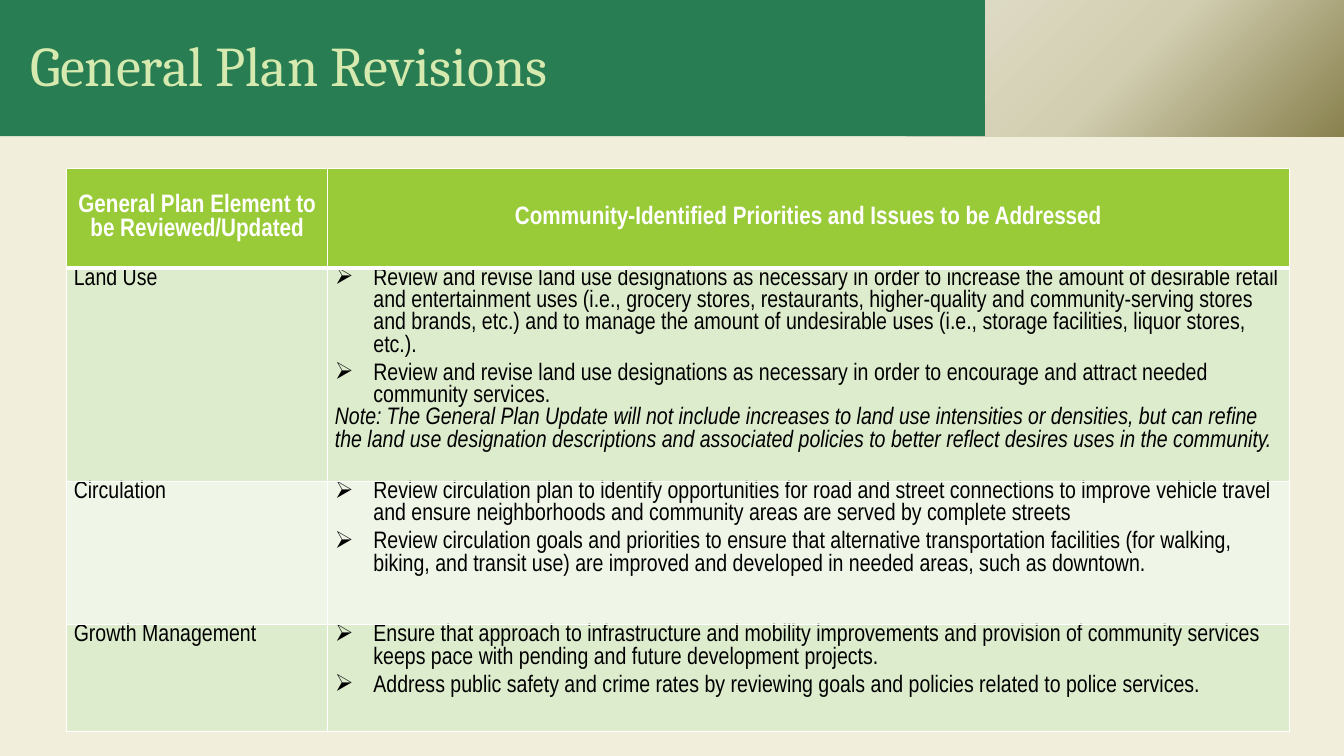
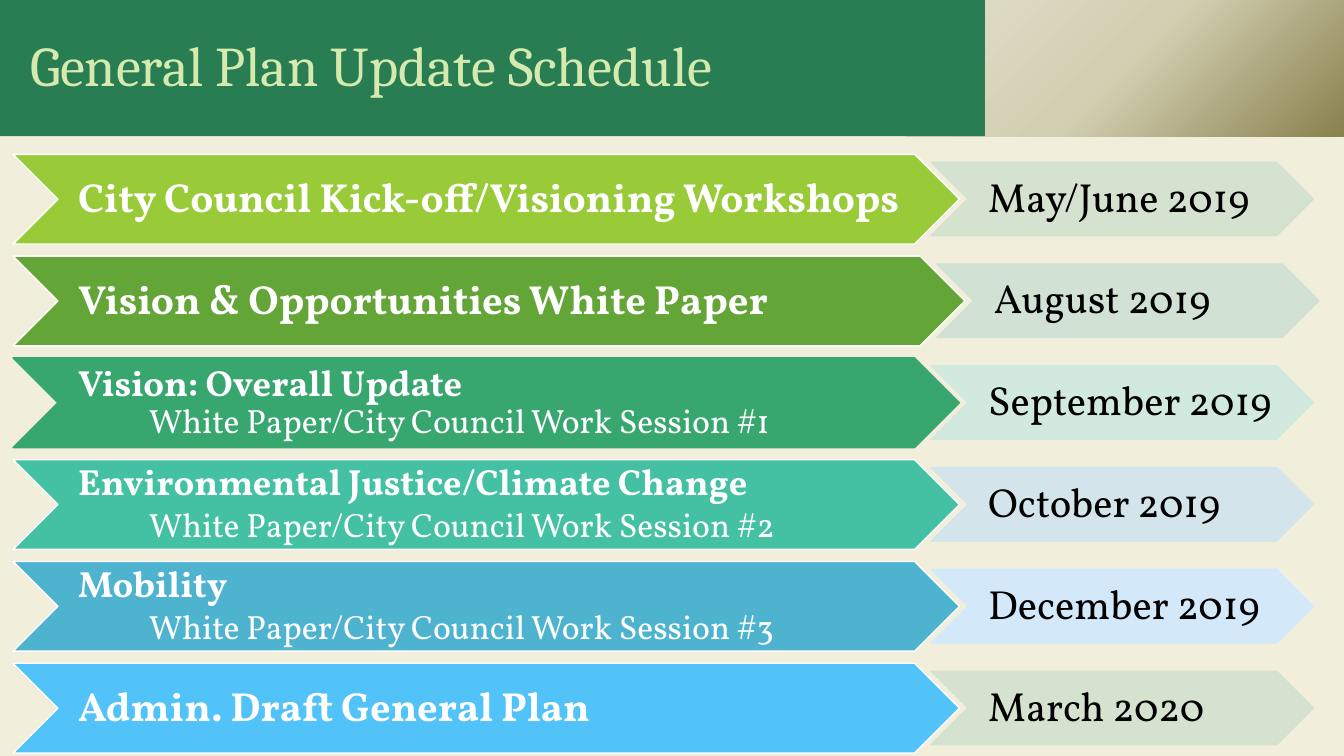
"""Build two slides on a general plan update: revisions table and schedule."""
from lxml import etree
from pptx import Presentation
from pptx import util as u
from pptx.dml.color import RGBColor
from pptx.enum import shapes, text
from pptx.oxml import parse_xml
from pptx.oxml.ns import nsdecls, qn

BACKGROUND, BAND, TITLE = "F1EFDC", "297D53", "D6EAAF"
WHITE, BLACK, LIME = "FFFFFF", "000000", "99CB38"
TABLE_FONT, TITLE_FONT, STEP_FONT = "Arial Narrow", "Cambria", "Vollkorn"
BAND_HEIGHT = 3.43


def paint(fill, colour):
    fill.solid()
    fill.fore_color.rgb = RGBColor.from_string(colour)


def write(frame, words, size, font, colour, bold=False, italic=False, align="LEFT",
          left=0, first=0, after=0, spacing=None, bullet=None):
    para = frame.add_paragraph() if frame.text else frame.paragraphs[0]
    para.alignment = getattr(text.PP_ALIGN, align)
    para.space_after = u.Pt(after)
    if spacing:
        para.line_spacing = spacing
    props = para._p.get_or_add_pPr()
    props.set("marL", str(u.Cm(left)))
    props.set("indent", str(u.Cm(first)))
    if bullet:
        etree.SubElement(props, qn("a:buChar")).set("char", bullet)
    span = para.add_run()
    span.text = words
    span.font.size, span.font.name = u.Pt(size), font
    span.font.bold, span.font.italic = bold, italic
    paint(span.font.fill, colour)


deck = Presentation()
deck.slide_width, deck.slide_height = u.Cm(33.87), u.Cm(19.05)
paint(deck.slide_master.background.fill, BACKGROUND)

pages = []
for heading in ("General Plan Revisions", "General Plan Update Schedule"):
    page = deck.slides.add_slide(deck.slide_layouts[6])
    corner = page.shapes.add_shape(shapes.MSO_SHAPE.RECTANGLE, u.Cm(22.83), 0,
                                   u.Cm(11.04), u.Cm(BAND_HEIGHT))
    corner.shadow.inherit = False
    corner.line.fill.background()
    stops = "".join(f'<a:gs pos="{place}"><a:srgbClr val="{colour}"/></a:gs>'
                    for place, colour in ((0, "89814E"), (50000, "D2CEB1"), (100000, "E2DFCC")))
    corner._element.spPr.find(qn("a:prstGeom")).addnext(parse_xml(
        f'<a:gradFill {nsdecls("a")}><a:gsLst>{stops}</a:gsLst><a:path path="circle">'
        '<a:fillToRect l="100000" t="100000"/></a:path></a:gradFill>'))

    band = page.shapes.add_shape(shapes.MSO_SHAPE.PENTAGON, 0, 0, u.Cm(24.82), u.Cm(BAND_HEIGHT))
    band.adjustments[0] = 0
    band.shadow.inherit = False
    band.line.fill.background()
    paint(band.fill, BAND)
    band.text_frame.word_wrap = True
    band.text_frame.vertical_anchor = text.MSO_ANCHOR.MIDDLE
    write(band.text_frame, heading, 40, TITLE_FONT, TITLE, left=0.51, spacing=0.9)
    pages.append(page)
revisions, schedule = pages

HEADERS = ("General Plan Element to be Reviewed/Updated",
           "Community-Identified Priorities and Issues to be Addressed")
ELEMENTS = (
    ("Land Use", "DEECCE", (
        "Review and revise land use designations as necessary in order to increase the amount of "
        "desirable retail and entertainment uses (i.e., grocery stores, restaurants, higher-quality "
        "and community-serving stores and brands, etc.) and to manage the amount of undesirable uses "
        "(i.e., storage facilities, liquor stores, etc.).",
        "Review and revise land use designations as necessary in order to encourage and attract "
        "needed community services."),
     "Note: The General Plan Update will not include increases to land use intensities or densities, "
     "but can refine the land use designation descriptions and associated policies to better reflect "
     "desires uses in the community."),
    ("Circulation", "EFF6E8", (
        "Review circulation plan to identify opportunities for road and street connections to improve "
        "vehicle travel and ensure neighborhoods and community areas are served by complete streets",
        "Review circulation goals and priorities to ensure that alternative transportation facilities "
        "(for walking, biking, and transit use) are improved and developed in needed areas, such as "
        "downtown."), None),
    ("Growth Management", "DEECCE", (
        "Ensure that approach to infrastructure and mobility improvements and provision of community "
        "services keeps pace with pending and future development projects.",
        "Address public safety and crime rates by reviewing goals and policies related to police "
        "services."), None),
)
COLUMNS, ROWS = (6.58, 24.23), (2.51, 5.38, 3.61, 2.69)
table = revisions.shapes.add_table(len(ROWS), len(COLUMNS), u.Cm(1.68), u.Cm(4.24),
                                   u.Cm(sum(COLUMNS)), u.Cm(sum(ROWS))).table
table.horz_banding = False
for column, width in zip(table.columns, COLUMNS):
    column.width = u.Cm(width)
for row, height in zip(table.rows, ROWS):
    row.height = u.Cm(height)

for index, row in enumerate(table.rows):
    for cell in row.cells:
        cell.margin_left = cell.margin_right = u.Cm(0.18)
        cell.margin_top = cell.margin_bottom = 0
        paint(cell.fill, ELEMENTS[index - 1][1] if index else LIME)
        edges = {"L": 1, "R": 1, "T": 3 if index == 1 else 1, "B": 1 if index else 3}
        for place, (side, points) in enumerate(edges.items()):
            cell._tc.tcPr.insert(place, parse_xml(
                f'<a:ln{side} {nsdecls("a")} w="{u.Pt(points)}"><a:solidFill>'
                f'<a:srgbClr val="{WHITE}"/></a:solidFill></a:ln{side}>'))

for cell, label in zip(table.rows[0].cells, HEADERS):
    cell.vertical_anchor = text.MSO_ANCHOR.MIDDLE
    write(cell.text_frame, label, 18, TABLE_FONT, WHITE, bold=True, align="CENTER")
for index, (element, _, issues, note) in enumerate(ELEMENTS, 1):
    name, detail = (cell.text_frame for cell in table.rows[index].cells)
    write(name, element, 17, TABLE_FONT, BLACK)
    for issue, after in zip(issues, (4, 0)):
        write(detail, issue, 17, TABLE_FONT, BLACK, left=0.97, first=-0.97, after=after, bullet="➢")
    if note:
        write(detail, note, 17, TABLE_FONT, BLACK, italic=True)

SESSION = "White Paper/City Council Work Session #"
STEPS = (
    ("City Council Kick-off/Visioning Workshops", None, LIME, WHITE, "May/June 2019", "D3E1CE"),
    ("Vision & Opportunities White Paper", None, "63A537", WHITE, "August 2019", "CEE1D5"),
    ("Vision: Overall Update", SESSION + "1", "37A76F", "37A76F", "September 2019", "CFE9E0"),
    ("Environmental Justice/Climate Change", SESSION + "2", "44C1A3", WHITE, "October 2019", "D0E5ED"),
    ("Mobility", SESSION + "3", "4EB3CF", WHITE, "December 2019", "D0E9FD"),
    ("Admin. Draft General Plan", None, "51C3F9", WHITE, "March 2020", "D3E1CE"),
)
for index, (step, session, colour, outline, date, tint) in enumerate(STEPS):
    top = 3.89 + 2.565 * index
    extra = 0.14 if index == 1 else 0
    arrows = []
    for left, y, width, height, fill, edge in (
            (0.33, top, 23.85 + extra, 2.26, colour, outline),
            (23.47 + extra, top + 0.2, 9.63, 1.85, tint, tint)):
        arrow = schedule.shapes.add_shape(shapes.MSO_SHAPE.CHEVRON, u.Cm(left), u.Cm(y),
                                          u.Cm(width), u.Cm(height))
        arrow.shadow.inherit = False
        paint(arrow.fill, fill)
        paint(arrow.line.fill, edge)
        arrow.line.width = u.Pt(1)
        frame = arrow.text_frame
        frame.word_wrap = True
        frame.vertical_anchor = text.MSO_ANCHOR.MIDDLE
        frame.margin_left, frame.margin_right = u.Cm(0.51), 0
        frame.margin_top = frame.margin_bottom = u.Cm(0.05)
        arrows.append(arrow)
    work, when = arrows
    for shade in when._element.spPr.iter(qn("a:srgbClr")):
        etree.SubElement(shade, qn("a:alpha")).set("val", "90000")
    write(when.text_frame, date, 29, STEP_FONT, BLACK, spacing=0.9)
    if session:
        gap = 0 if index == 2 else 4
        write(work.text_frame, step, 26, STEP_FONT, WHITE, bold=True, after=gap, spacing=0.9)
        write(work.text_frame, session, 24, STEP_FONT, WHITE, left=1.78, after=gap, spacing=0.9)
    else:
        write(work.text_frame, step, 29, STEP_FONT, WHITE, bold=True, spacing=0.9)

deck.save("out.pptx")
